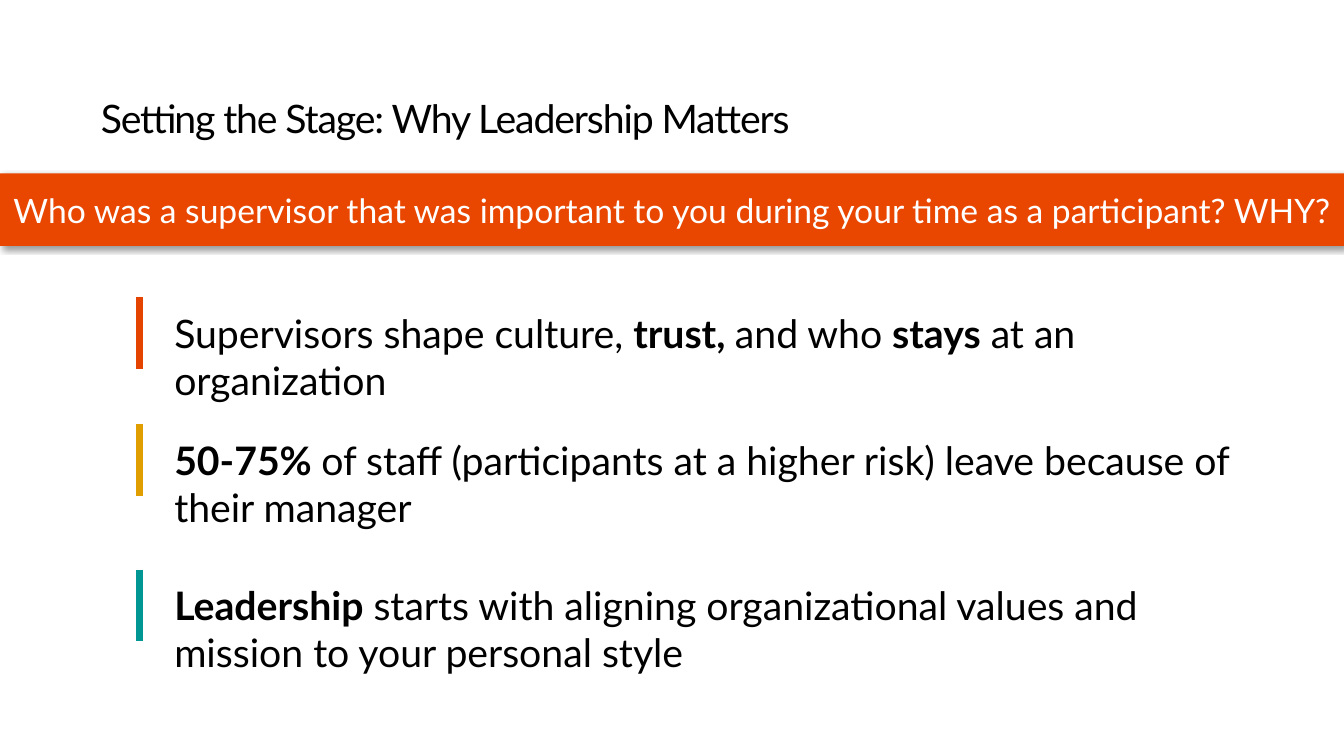
from dataclasses import dataclass

from lxml.etree import SubElement
from pptx import Presentation
from pptx.dml.color import RGBColor
from pptx.enum.shapes import MSO_CONNECTOR, MSO_SHAPE
from pptx.enum.text import MSO_ANCHOR, MSO_AUTO_SIZE, PP_ALIGN
from pptx.oxml import parse_xml
from pptx.oxml.ns import nsdecls, qn
from pptx.util import Inches, Pt


@dataclass(frozen=True)
class Theme:
    font: str = "Lato"
    text: str = "000000"
    light: str = "FFFFFF"
    banner: str = "E94600"
    orange: str = "E44400"
    gold: str = "E19E00"
    teal: str = "009693"
    body_size: int = 28
    banner_size: int = 24
    bar_width: int = 5


THEME = Theme()
BAR_LEFT, BAR_HEIGHT = 1.38, 0.71
TEXT_LEFT, TEXT_HEIGHT, TEXT_DROP = 1.63, 1.04, 0.07

# Bar top, bar colour, text width, spans of (wording, bold)
POINTS = [
    (2.95, THEME.orange, 11.05, [
        ("Supervisors shape culture, ", False), ("trust, ", True),
        ("and who ", False), ("stays", True), (" at an organization", False)]),
    (4.21, THEME.gold, 11.05, [
        ("50-75% ", True),
        ("of staff (participants at a higher risk) leave because of their manager", False)]),
    (5.65, THEME.teal, 10.32, [
        ("Leadership", True),
        (" starts with aligning organizational values and mission to your personal style",
         False)]),
]


def set_values(target, values):
    for name, value in values.items():
        setattr(target, name, value)


def add_span(para, text, size, color, bold=False):
    span = para.add_run()
    span.text = text
    set_values(span.font, {"name": THEME.font, "size": Pt(size), "bold": bold})
    span.font.color.rgb = RGBColor.from_string(color)
    return span


def add_title(page, text):
    title = page.shapes.title
    set_values(title, {"left": Inches(1), "top": Inches(0.76),
                       "width": Inches(11.33), "height": Inches(0.65)})
    set_values(title.text_frame, {
        "vertical_anchor": MSO_ANCHOR.BOTTOM, "word_wrap": True,
        "auto_size": MSO_AUTO_SIZE.NONE, "margin_left": 0,
        "margin_top": Inches(0.05), "margin_right": 0, "margin_bottom": 0})
    para = title.text_frame.paragraphs[0]
    set_values(para, {"alignment": PP_ALIGN.LEFT, "line_spacing": 0.9})
    span = add_span(para, text, THEME.body_size, THEME.text)
    span.font._element.set("spc", "-80")


def add_banner(page, text):
    banner = page.shapes.add_shape(
        MSO_SHAPE.RECTANGLE, 0, Inches(1.72), Inches(13.33), Inches(0.72))
    banner.fill.solid()
    banner.fill.fore_color.rgb = RGBColor.from_string(THEME.banner)
    banner.line.fill.background()
    banner._element.spPr.append(parse_xml(
        f'<a:effectLst {nsdecls("a")}>'
        f'<a:outerShdw blurRad="{Pt(4)}" dist="{Pt(3)}" dir="2700000" algn="tl" '
        f'rotWithShape="0"><a:srgbClr val="{THEME.text}"><a:alpha val="40000"/>'
        '</a:srgbClr></a:outerShdw></a:effectLst>'))
    set_values(banner.text_frame, {"vertical_anchor": MSO_ANCHOR.MIDDLE, "word_wrap": True})
    para = banner.text_frame.paragraphs[0]
    para.alignment = PP_ALIGN.CENTER
    add_span(para, text, THEME.banner_size, THEME.light)


def add_point(page, top, color, width, spans):
    """Group a wrapped statement with the coloured bar on its left."""
    group = page.shapes.add_group_shape()
    box = group.shapes.add_textbox(
        Inches(TEXT_LEFT), Inches(top + TEXT_DROP), Inches(width), Inches(TEXT_HEIGHT))
    set_values(box.text_frame, {"word_wrap": True, "auto_size": MSO_AUTO_SIZE.SHAPE_TO_FIT_TEXT})
    para = box.text_frame.paragraphs[0]
    for text, bold in spans:
        add_span(para, text, THEME.body_size, THEME.text, bold)

    bar = group.shapes.add_connector(
        MSO_CONNECTOR.STRAIGHT, Inches(BAR_LEFT), Inches(top),
        Inches(BAR_LEFT), Inches(top + BAR_HEIGHT))
    bar.line.width = Pt(THEME.bar_width)
    bar.line.color.rgb = RGBColor.from_string(color)
    SubElement(bar._element.spPr, qn("a:effectLst"))


def main():
    deck = Presentation()
    set_values(deck, {"slide_width": Inches(13.33), "slide_height": Inches(7.5)})
    page = deck.slides.add_slide(deck.slide_layouts[5])
    add_title(page, "Setting the Stage: Why Leadership Matters")
    add_banner(page, "Who was a supervisor that was important to you "
                     "during your time as a participant? WHY?")
    for point in POINTS:
        add_point(page, *point)
    deck.save("out.pptx")


if __name__ == "__main__":
    main()
